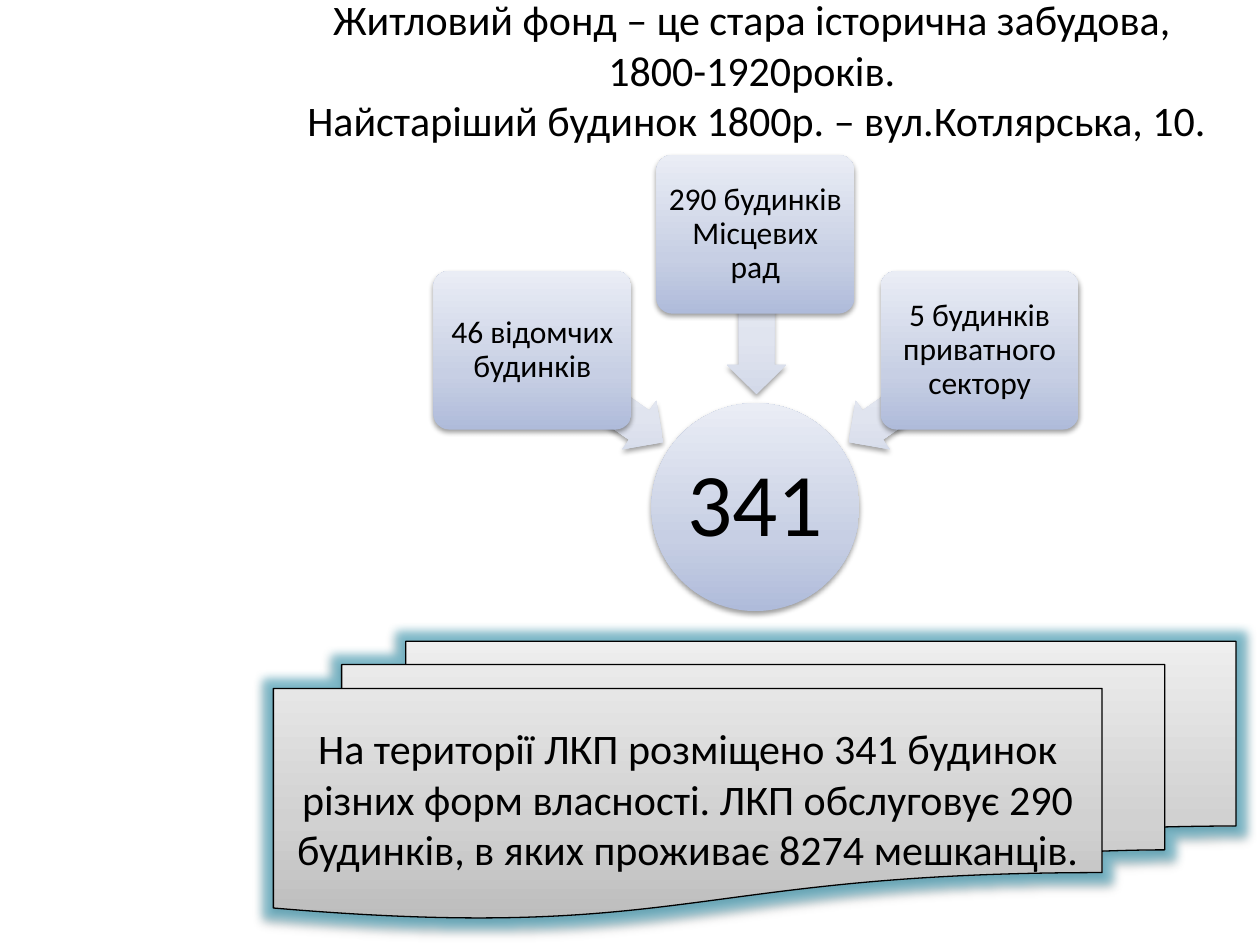
from lxml.etree import SubElement
from pptx import Presentation
from pptx.dml.color import RGBColor
from pptx.enum.shapes import MSO_SHAPE
from pptx.enum.text import MSO_ANCHOR, PP_ALIGN
from pptx.oxml.ns import qn
from pptx.util import Inches, Pt

BLUE = ("AFBBDA", "C7CFE4", "EAEDF5")
PALE = ("D3D9E9", "E0E4EF", "F2F4F9")
GREY = ("BDBDBD", "D1D1D1", "EEEEEE")


def color(code):
    return RGBColor.from_string(code)


class Deck:
    font = "Calibri"
    ink = "000000"

    def __init__(self, wide, high):
        self.file = Presentation()
        self.file.slide_width = Inches(wide)
        self.file.slide_height = Inches(high)
        self.slide = self.file.slides.add_slide(self.file.slide_layouts[6])

    def label(self, shape, lines, size, inset=None, space=None):
        frame = shape.text_frame
        frame.word_wrap = True
        frame.vertical_anchor = MSO_ANCHOR.MIDDLE
        if inset is not None:
            frame.margin_left = frame.margin_right = Inches(inset)
            frame.margin_top = frame.margin_bottom = Inches(inset)
        para = frame.paragraphs[0]
        para.alignment = PP_ALIGN.CENTER
        if space:
            para.line_spacing = space
        for i, line in enumerate(lines):
            if i:
                para.add_line_break()
            run = para.add_run()
            run.text = line
            run.font.name = self.font
            run.font.size = Pt(size)
            run.font.color.rgb = color(self.ink)

    def text(self, box, lines, size):
        shape = self.slide.shapes.add_textbox(*map(Inches, box))
        self.label(shape, lines, size)

    def shade(self, shape, tones):
        # Three-stop gradient, dark at the bottom
        shape.fill.gradient()
        shape.fill.gradient_angle = 90
        grad = shape._element.spPr.find(qn("a:gradFill"))
        grad.set("rotWithShape", "0")
        stops = grad.find(qn("a:gsLst"))
        stops.clear()
        for pos, tone in zip((0, 35, 100), tones):
            stop = SubElement(stops, qn("a:gs"), pos=str(pos * 1000))
            SubElement(stop, qn("a:srgbClr"), val=tone)

    def effect(self, shape, glow):
        shape.shadow.inherit = False
        root = shape._element.spPr.find(qn("a:effectLst"))
        if glow:
            halo = SubElement(root, qn("a:glow"), rad=str(Pt(11)))
            tint = SubElement(halo, qn("a:srgbClr"), val=glow)
            SubElement(tint, qn("a:alpha"), val="60000")
        drop = SubElement(root, qn("a:outerShdw"), blurRad="40000",
                          dist="20000", dir="5400000", rotWithShape="0")
        tint = SubElement(drop, qn("a:srgbClr"), val=self.ink)
        SubElement(tint, qn("a:alpha"), val="38000")

    def shape(self, kind, box, tones, adjust=(), turn=0, edge=False, glow=None):
        shape = self.slide.shapes.add_shape(kind, *map(Inches, box))
        for i, value in enumerate(adjust):
            shape.adjustments[i] = value
        shape.rotation = turn
        self.shade(shape, tones)
        if edge:
            shape.line.color.rgb = color(self.ink)
            shape.line.width = Pt(0.75)
        else:
            shape.line.fill.background()
        self.effect(shape, glow)
        return shape


def main():
    deck = Deck(10, 7.5)

    # Title
    deck.text((2.01, 0.03, 7.99, 1.04),
              ["Житловий фонд – це стара історична забудова, ",
               "1800-1920років. ",
               "Найстаріший будинок 1800р. – вул.Котлярська, 10."], 24)

    # Total in the middle
    hub = deck.shape(MSO_SHAPE.OVAL, (5.17, 3.2, 1.65, 1.65), BLUE)
    deck.label(hub, ["341"], 51, 0.04, 0.9)

    # Parts, each with an arrow to the total
    parts = [
        ("46 відомчих будинків", 3.44, 2.15, 4.11, 2.91, 215),
        ("290 будинків Місцевих рад", 5.21, 1.23, 5.37, 2.26, 270),
        ("5 будинків приватного сектору", 6.99, 2.15, 6.62, 2.91, 325),
    ]
    for name, left, top, tail, level, turn in parts:
        deck.shape(MSO_SHAPE.LEFT_ARROW, (tail, level, 1.27, 0.47), PALE,
                   (0.6, 0.5), turn)
        card = deck.shape(MSO_SHAPE.ROUNDED_RECTANGLE,
                          (left, top, 1.57, 1.26), BLUE, (0.1,))
        deck.label(card, [name], 18, 0.04, 0.9)

    # Summary
    note = deck.shape(MSO_SHAPE.FLOWCHART_MULTIDOCUMENT,
                      (2.17, 5.09, 7.64, 2.2), GREY, edge=True, glow="4BACC6")
    deck.label(note, ["На території ЛКП розміщено 341 будинок різних форм "
                      "власності. ЛКП обслуговує 290 будинків, в яких "
                      "проживає 8274 мешканців."], 24)

    deck.file.save("out.pptx")


if __name__ == "__main__":
    main()
